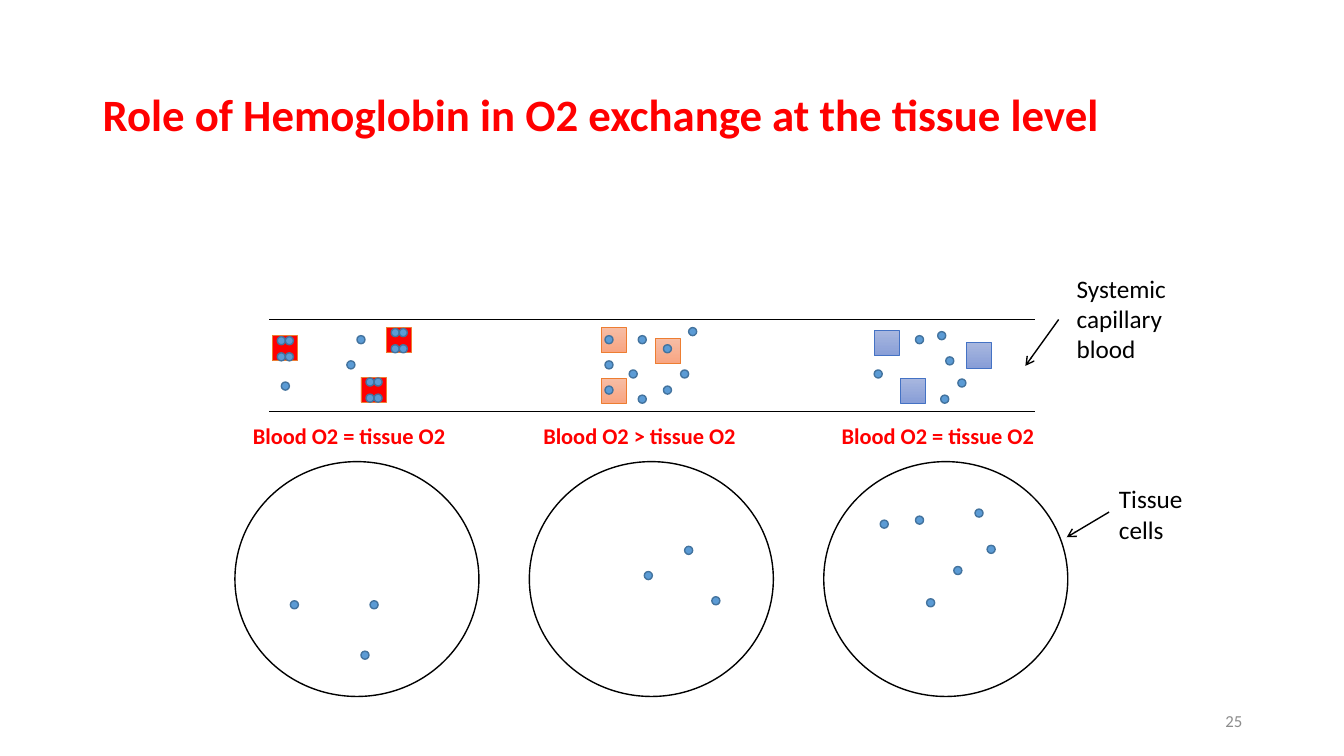
from dataclasses import dataclass

from lxml import etree
from pptx import Presentation
from pptx.dml.color import RGBColor
from pptx.enum.shapes import MSO_CONNECTOR, MSO_SHAPE
from pptx.enum.text import MSO_ANCHOR, PP_ALIGN
from pptx.oxml.ns import qn
from pptx.util import Emu, Pt

EMU_PER_PX = 9144  # 100 px to the inch
FONT = "Calibri"
BLANK_LAYOUT = 6

RED = RGBColor(0xFF, 0x00, 0x00)
BLACK = RGBColor(0x00, 0x00, 0x00)
GREY = RGBColor(0x8C, 0x8C, 0x8C)
OXYGEN_FILL = RGBColor(0x5B, 0x9B, 0xD5)
OXYGEN_EDGE = RGBColor(0x43, 0x73, 0x9E)
ORANGE = RGBColor(0xED, 0x7D, 0x31)
BLUE = RGBColor(0x44, 0x72, 0xC4)
PEACH_TOP = RGBColor(0xF7, 0xBD, 0xA5)
PEACH_BOTTOM = RGBColor(0xF8, 0xA5, 0x82)
PERIWINKLE_TOP = RGBColor(0xA8, 0xB7, 0xDF)
PERIWINKLE_BOTTOM = RGBColor(0x88, 0x9E, 0xD7)

OVAL, RECT = MSO_SHAPE.OVAL, MSO_SHAPE.RECTANGLE
STRAIGHT = MSO_CONNECTOR.STRAIGHT
TOP, MIDDLE = MSO_ANCHOR.TOP, MSO_ANCHOR.MIDDLE
LEFT, RIGHT = PP_ALIGN.LEFT, PP_ALIGN.RIGHT

Point = tuple[int, int]
Box = tuple[int, int, int, int]

OXYGEN_SIZE = 8
HEMOGLOBIN_SIZE = 25
LABEL_TOP = 414
TISSUE_LEFT, TISSUE_PITCH = 233, 292
FULL_LOAD = [(x, y) for x in (5, 13) for y in (1, 17)]


@dataclass
class Hemoglobin:
    at: Point
    bound: list[Point]  # oxygen positions inside the square


@dataclass
class Stage:
    label: str
    label_left: int
    fills: list[RGBColor]
    edge: RGBColor
    hemoglobins: list[Hemoglobin]
    blood_oxygen: list[Point]
    tissue_oxygen: list[Point]


@dataclass
class Caption:
    text: str
    box: Box
    size: int
    color: RGBColor = BLACK
    bold: bool = False
    wrap: bool = True
    anchor: MSO_ANCHOR = TOP
    align: PP_ALIGN = LEFT


@dataclass
class Stroke:
    start: Point
    end: Point
    arrow: bool = False


STAGES = [
    Stage("Blood O2 = tissue O2", 241, [RED], ORANGE,
          [Hemoglobin(at, FULL_LOAD) for at in ((270, 333), (358, 374), (383, 325))],
          [(344, 358), (279, 379), (354, 333)],
          [(367, 596), (288, 596), (358, 646)]),
    Stage("Blood O2 > tissue O2", 529, [PEACH_TOP, PEACH_BOTTOM], ORANGE,
          [Hemoglobin((596, 325), [(4, 8)]), Hemoglobin((596, 375), [(4, 8)]),
           Hemoglobin((650, 336), [(8, 6)])],
          [(633, 333), (600, 358), (658, 383), (683, 325), (624, 367),
           (633, 392), (675, 367)],
          [(679, 542), (706, 592), (639, 567)]),
    Stage("Blood O2 = tissue O2", 825, [PERIWINKLE_TOP, PERIWINKLE_BOTTOM], BLUE,
          [Hemoglobin(at, []) for at in ((867, 328), (893, 375), (958, 340))],
          [(930, 329), (938, 354), (950, 376), (867, 367), (908, 333), (933, 392)],
          [(967, 505), (908, 512), (946, 562), (873, 516), (919, 594), (979, 541)]),
]

CAPTIONS = [
    Caption("Role of Hemoglobin in O2 exchange at the tissue level",
            (92, 40, 1150, 145), 32, RED, bold=True, anchor=MIDDLE),
    Caption("Systemic capillary blood", (1058, 266, 133, 101), 18),
    Caption("Tissue cells", (1100, 475, 83, 71), 18),
    Caption("25", (942, 695, 300, 40), 12, GREY, anchor=MIDDLE, align=RIGHT),
]
# The two callouts sit just right of their arrows
STROKES = [
    Stroke((267, 317), (1027, 317)),
    Stroke((267, 408), (1027, 408)),
    Stroke((1050, 317), (1017, 363), arrow=True),
    Stroke((1100, 508), (1058, 533), arrow=True),
]


def px(length: int) -> Emu:
    return Emu(length * EMU_PER_PX)


def add_figure(slide, preset: MSO_SHAPE, box: Box, fills: list[RGBColor],
               edge: RGBColor, weight: float) -> None:
    """Draw a preset shape: no fill, one colour, or a downward gradient."""
    figure = slide.shapes.add_shape(preset, *map(px, box))
    figure.shadow.inherit = False
    figure.line.color.rgb = edge
    figure.line.width = Pt(weight)
    if not fills:
        figure.fill.background()
    elif len(fills) == 1:
        figure.fill.solid()
        figure.fill.fore_color.rgb = fills[0]
    else:
        figure.fill.gradient()
        figure.fill.gradient_angle = 270
        for stop, color in zip(figure.fill.gradient_stops, fills):
            stop.color.rgb = color


def add_oxygen(slide, at: Point) -> None:
    add_figure(slide, OVAL, (*at, OXYGEN_SIZE, OXYGEN_SIZE), [OXYGEN_FILL], OXYGEN_EDGE, 1)


def add_hemoglobin(slide, hemoglobin: Hemoglobin, stage: Stage) -> None:
    left, top = hemoglobin.at
    add_figure(slide, RECT, (left, top, HEMOGLOBIN_SIZE, HEMOGLOBIN_SIZE),
               stage.fills, stage.edge, 0.5)
    for dx, dy in hemoglobin.bound:
        add_oxygen(slide, (left + dx, top + dy))


def add_stroke(slide, stroke: Stroke) -> None:
    line = slide.shapes.add_connector(STRAIGHT, *map(px, stroke.start + stroke.end))
    line.line.color.rgb = BLACK
    line.line.width = Pt(1)
    if stroke.arrow:
        etree.SubElement(line.line._get_or_add_ln(), qn("a:tailEnd"), type="arrow")
    etree.SubElement(line._element.spPr, qn("a:effectLst"))


def add_caption(slide, caption: Caption) -> None:
    frame = slide.shapes.add_textbox(*map(px, caption.box)).text_frame
    frame.word_wrap = caption.wrap
    frame.vertical_anchor = caption.anchor
    paragraph = frame.paragraphs[0]
    paragraph.alignment = caption.align
    run = paragraph.add_run()
    run.text = caption.text
    run.font.name = FONT
    run.font.size = Pt(caption.size)
    run.font.bold = caption.bold
    run.font.color.rgb = caption.color


def add_stage(slide, index: int, stage: Stage) -> None:
    # Tissue cell
    tissue_box = (TISSUE_LEFT + index * TISSUE_PITCH, 458, 242, 233)
    add_figure(slide, OVAL, tissue_box, [], BLACK, 1)
    # Free oxygen, then hemoglobin with its bound oxygen
    for at in stage.blood_oxygen + stage.tissue_oxygen:
        add_oxygen(slide, at)
    for hemoglobin in stage.hemoglobins:
        add_hemoglobin(slide, hemoglobin, stage)
    # Balance of oxygen between blood and tissue
    add_caption(slide, Caption(stage.label, (stage.label_left, LABEL_TOP, 214, 37),
                               16, RED, bold=True, wrap=False))


def main() -> None:
    deck = Presentation()
    deck.slide_width, deck.slide_height = px(1333), px(750)
    slide = deck.slides.add_slide(deck.slide_layouts[BLANK_LAYOUT])
    # Capillary walls and callout arrows
    for stroke in STROKES:
        add_stroke(slide, stroke)
    for index, stage in enumerate(STAGES):
        add_stage(slide, index, stage)
    # Title, callouts and page number
    for caption in CAPTIONS:
        add_caption(slide, caption)
    deck.save("out.pptx")


if __name__ == "__main__":
    main()
